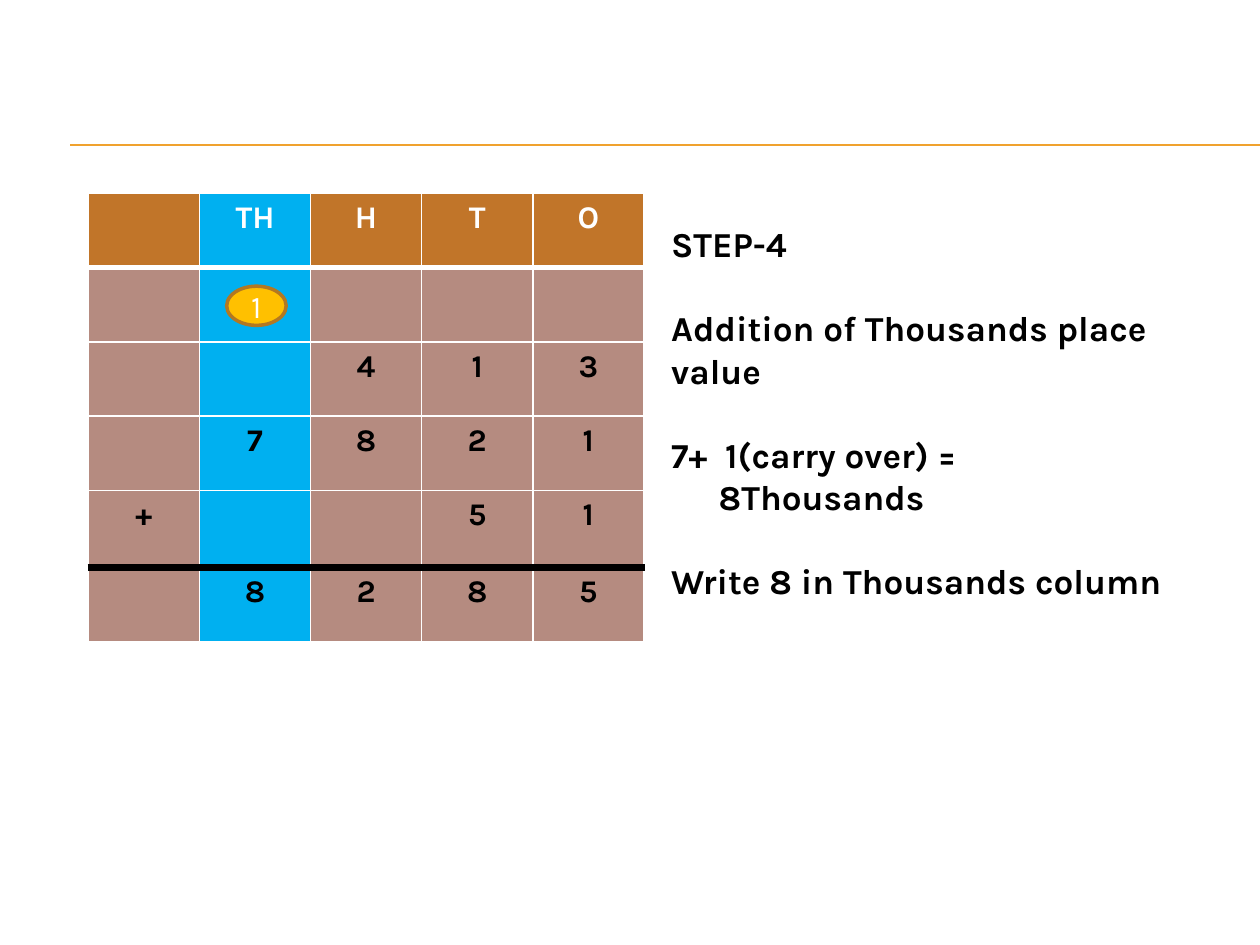
from dataclasses import dataclass

from lxml import etree
from pptx import Presentation
from pptx.dml.color import RGBColor
from pptx.enum import shapes, text
from pptx.oxml import ns
from pptx.util import Cm, Pt


@dataclass(frozen=True)
class Theme:
    """Font, type sizes and colours of the slide."""
    font: str = "Karla"
    body: int = 18
    step: int = 20
    white: str = "FFFFFF"
    black: str = "000000"
    rule: str = "F0A22E"
    header: str = "C17529"
    cell: str = "B58B80"
    focus: str = "00B0F0"
    carry: str = "FFC000"
    carry_edge: str = "B27822"


T = Theme()
FOCUS_COL = 1
COL_WIDTH = 2.24
ROW_HEIGHTS = [1.5, 1.5, 1.5, 1.5, 1.55, 1.5]
SUM_ROWS = [
    ["", "TH", "H", "T", "O"],
    ["", "", "", "", ""],
    ["", "", "4", "1", "3"],
    ["", "7", "8", "2", "1"],
    ["+", "", "", "5", "1"],
    ["", "8", "2", "8", "5"],
]
STEPS = [
    ("STEP-4", False),
    ("Addition of Thousands place value", False),
    ("7+  1(carry over) =  8Thousands", True),
    ("Write 8 in Thousands column", True),
]


def rgb(value):
    """Turn a hex string into a colour."""
    return RGBColor.from_string(value)


def write(p, content, size=T.body, color=T.black, bold=True, align=None, before=0):
    """Add formatted text to a paragraph."""
    p.alignment = align
    if before:
        p.space_before = Pt(before)
    r = p.add_run()
    r.text = content
    r.font.name, r.font.size, r.font.bold = T.font, Pt(size), bold
    r.font.color.rgb = rgb(color)


def add_rule(s, y):
    """Draw a thin horizontal line to the right edge of the slide."""
    line = s.shapes.add_connector(
        shapes.MSO_CONNECTOR.STRAIGHT, Cm(1.42), Cm(y), Cm(25.4), Cm(y))
    line.line.color.rgb = rgb(T.rule)
    line.line.width = Pt(0.75)
    etree.SubElement(line._element.spPr, ns.qn("a:effectLst"))


def set_border(cell, side, color, width):
    """Set one border of a table cell."""
    ln = etree.SubElement(
        cell._tc.get_or_add_tcPr(), ns.qn(f"a:ln{side}"), w=str(Pt(width)))
    fill = etree.SubElement(ln, ns.qn("a:solidFill"))
    etree.SubElement(fill, ns.qn("a:srgbClr"), val=color)


def add_sum_table(s):
    """Add the place value table with the thousands column in focus."""
    n_rows, n_cols = len(SUM_ROWS), len(SUM_ROWS[0])
    table = s.shapes.add_table(
        n_rows, n_cols, Cm(1.78), Cm(3.89),
        Cm(COL_WIDTH * n_cols), Cm(sum(ROW_HEIGHTS))).table
    for col in table.columns:
        col.width = Cm(COL_WIDTH)
    plain, under_header, total = (T.white, 1), (T.white, 3), (T.black, 4.5)
    edges = [plain, under_header, plain, plain, plain, total, plain]
    for i, values in enumerate(SUM_ROWS):
        table.rows[i].height = Cm(ROW_HEIGHTS[i])
        base, ink = (T.header, T.white) if i == 0 else (T.cell, T.black)
        for j, value in enumerate(values):
            cell = table.cell(i, j)
            for side, edge in zip("LRTB", (plain, plain, edges[i], edges[i + 1])):
                set_border(cell, side, *edge)
            cell.fill.solid()
            cell.fill.fore_color.rgb = rgb(T.focus if j == FOCUS_COL else base)
            if value:
                write(cell.text_frame.paragraphs[0], value, color=ink,
                      align=text.PP_ALIGN.CENTER)


def add_steps(s):
    """Add the explanation beside the table."""
    tf = s.shapes.add_textbox(Cm(13.28), Cm(4.37), Cm(10.52), Cm(7.09)).text_frame
    tf.word_wrap = True
    tf.auto_size = text.MSO_AUTO_SIZE.SHAPE_TO_FIT_TEXT
    for i, (content, hanging) in enumerate(STEPS):
        p = tf.add_paragraph() if i else tf.paragraphs[0]
        if hanging:
            pPr = p._p.get_or_add_pPr()
            pPr.set("marL", str(Cm(0.96)))
            pPr.set("indent", str(-Cm(0.96)))
        write(p, content, size=T.step, before=24 if i else 0)


def add_carry(s):
    """Add the oval that holds the carried digit."""
    sp = s.shapes.add_shape(
        shapes.MSO_SHAPE.OVAL, Cm(4.57), Cm(5.77), Cm(1.2), Cm(0.79))
    sp.shadow.inherit = False
    sp.fill.solid()
    sp.fill.fore_color.rgb = rgb(T.carry)
    sp.line.color.rgb = rgb(T.carry_edge)
    sp.line.width = Pt(2)
    tf = sp.text_frame
    tf.vertical_anchor = text.MSO_ANCHOR.MIDDLE
    write(tf.paragraphs[0], "1", color=T.white, bold=False,
          align=text.PP_ALIGN.CENTER)


def main():
    """Build and save the slide."""
    prs = Presentation()
    prs.slide_width, prs.slide_height = Cm(25.4), Cm(19.05)
    s = prs.slides.add_slide(prs.slide_layouts[6])
    for y in (2.92, 2.94):
        add_rule(s, y)
    add_sum_table(s)
    add_steps(s)
    add_carry(s)
    prs.save("out.pptx")


if __name__ == "__main__":
    main()
